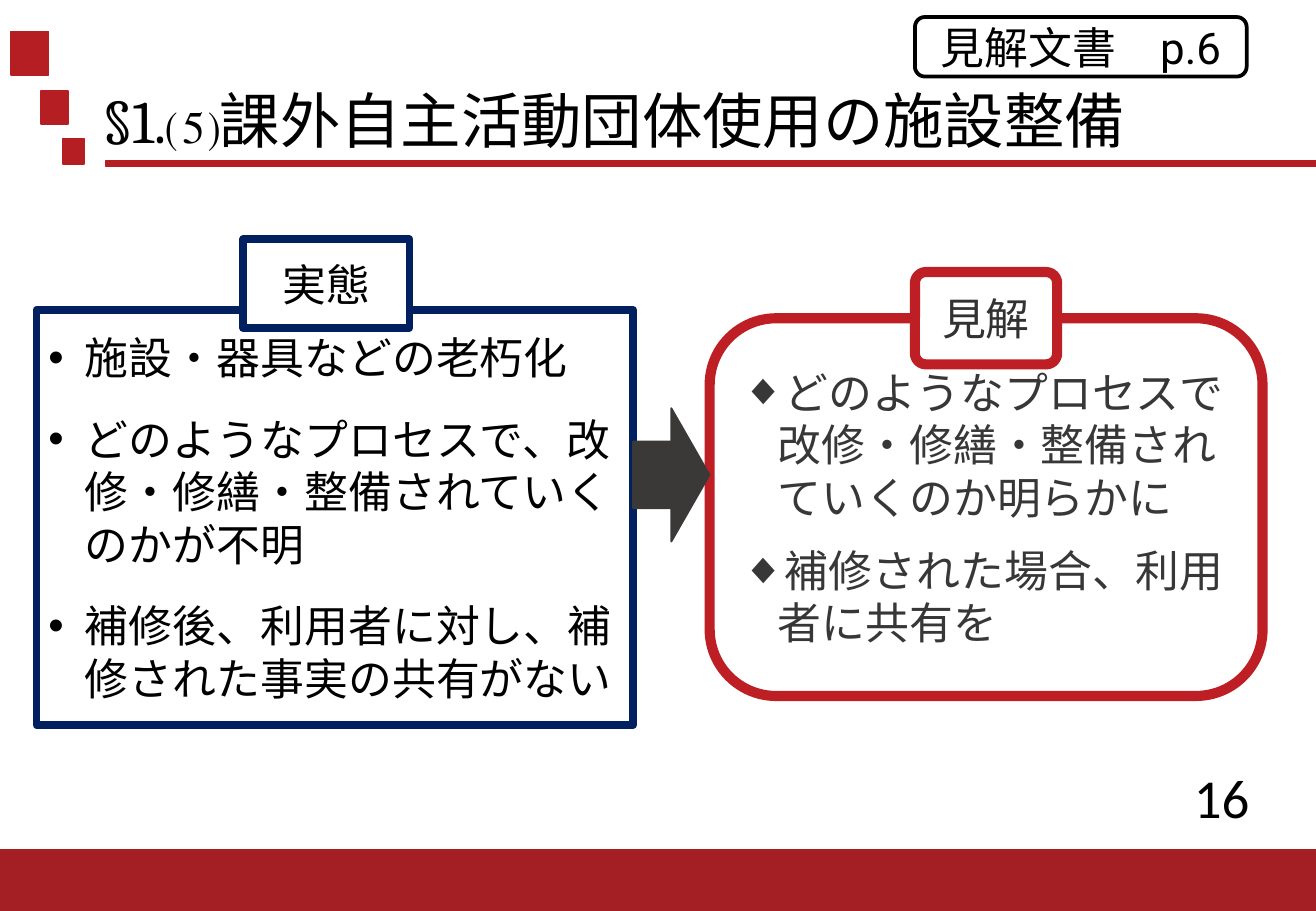
"""Build the slide that compares the facts and the opinion on facility upkeep."""
from dataclasses import dataclass
from typing import Optional

from lxml import etree
from pptx import Presentation
from pptx import util as u
from pptx.dml.color import RGBColor
from pptx.enum import shapes, text
from pptx.oxml import ns

PX = 9144
RECT = shapes.MSO_SHAPE.RECTANGLE
ROUND = shapes.MSO_SHAPE.ROUNDED_RECTANGLE
ARROW = shapes.MSO_SHAPE.RIGHT_ARROW
LEFT, MID, RIGHT = text.PP_ALIGN.LEFT, text.PP_ALIGN.CENTER, text.PP_ALIGN.RIGHT


@dataclass(frozen=True)
class Theme:
    black: str = "000000"
    white: str = "FFFFFF"
    bar: str = "A31F24"
    red: str = "B51F24"
    frame: str = "BE1F24"
    navy: str = "002060"
    gray: str = "373737"
    label: str = "323232"
    arrow: str = "3B3838"
    title: float = 35.8
    number: float = 32.5
    body: float = 26
    sans: str = "Calibri"
    serif: str = "Cambria"
    tag: str = "Roboto"


THEME = Theme()


@dataclass(frozen=True)
class Words:
    lines: tuple[str, ...]
    color: str = THEME.black
    size: float = THEME.body
    font: str = THEME.sans
    align: text.PP_ALIGN = MID
    bullet: str = ""
    gap: float = 0
    pitch: float = 1
    inset: tuple[int, int] = (10, 5)


@dataclass(frozen=True)
class Box:
    at: tuple[int, int, int, int]
    kind: Optional[shapes.MSO_SHAPE] = RECT
    fill: str = ""
    line: str = ""
    width: float = 1
    curve: Optional[float] = None
    words: Optional[Words] = None


def square(*at: int) -> Box:
    """Give a red mark of the page frame."""
    return Box(at, fill=THEME.red, line=THEME.red)


BOXES = (
    Box((0, 699, 1083, 51), fill=THEME.bar),
    square(87, 132, 996, 5),
    square(9, 26, 31, 36),
    square(34, 75, 22, 27),
    square(52, 114, 17, 21),
    Box((74, 43, 975, 118), None, words=Words(
        ("§1.⑸課外自主活動団体使用の施設整備",), size=THEME.title,
        font=THEME.serif, align=LEFT, pitch=0.9)),
    Box((794, 636, 244, 40), None, words=Words(
        ("16",), size=THEME.number, align=RIGHT)),
    Box((30, 255, 491, 342), fill=THEME.white, line=THEME.navy, width=4.5,
        words=Words(("施設・器具などの老朽化",
                     "どのようなプロセスで、改修・修繕・整備されていくのかが不明",
                     "補修後、利用者に対し、補修された事実の共有がない"),
                    align=LEFT, bullet="•", gap=17)),
    Box((200, 197, 137, 73), fill=THEME.white, line=THEME.navy, width=4.5,
        words=Words(("実態",))),
    Box((584, 262, 455, 311), ROUND, line=THEME.frame, width=6, curve=0.176,
        words=Words(("どのようなプロセスで改修・修繕・整備されていくのか明らかに",
                     "補修された場合、利用者に共有を"),
                    THEME.gray, align=LEFT, bullet="◆", gap=12)),
    Box((753, 224, 117, 76), ROUND, THEME.white, THEME.frame, 6, 0.118,
        Words(("見解",), THEME.label)),
    Box((521, 336, 63, 110), ARROW, THEME.arrow, THEME.arrow),
    Box((753, 14, 273, 49), ROUND, line=THEME.black, width=2.25,
        words=Words(("見解文書　p.6",), font=THEME.tag, inset=(8, 4))),
)


def mark(para, sign: str) -> None:
    """Hang a bullet sign in front of a paragraph."""
    props = para._p.get_or_add_pPr()
    props.set("marL", str(30 * PX))
    props.set("indent", str(-30 * PX))
    etree.SubElement(props, ns.qn("a:buFont")).set("typeface", "Arial")
    etree.SubElement(props, ns.qn("a:buChar")).set("char", sign)


def write(frame, words: Words) -> None:
    """Fill a text frame with styled paragraphs."""
    frame.word_wrap = True
    frame.vertical_anchor = text.MSO_ANCHOR.MIDDLE
    frame.margin_left = frame.margin_right = words.inset[0] * PX
    frame.margin_top = frame.margin_bottom = words.inset[1] * PX
    for i, line in enumerate(words.lines):
        para = frame.add_paragraph() if i else frame.paragraphs[0]
        para.text = line
        para.alignment = words.align
        para.line_spacing = words.pitch
        if i:
            para.space_before = u.Pt(words.gap)
        if words.bullet:
            mark(para, words.bullet)
        para.font.name = words.font
        para.font.size = u.Pt(words.size)
        para.font.color.rgb = RGBColor.from_string(words.color)


def paint(fill, color: str) -> None:
    """Set a solid colour, or none at all."""
    if color:
        fill.solid()
        fill.fore_color.rgb = RGBColor.from_string(color)
    else:
        fill.background()


def draw(slide, box: Box) -> None:
    """Put one box on the slide."""
    place = [n * PX for n in box.at]
    if box.kind is None:
        shape = slide.shapes.add_textbox(*place)
    else:
        shape = slide.shapes.add_shape(box.kind, *place)
        shape.shadow.inherit = False
        paint(shape.fill, box.fill)
        paint(shape.line.fill, box.line)
        if box.line:
            shape.line.width = u.Pt(box.width)
        if box.curve is not None:
            shape.adjustments[0] = box.curve
    if box.words:
        write(shape.text_frame, box.words)


def main() -> None:
    """Build and save the slide."""
    deck = Presentation()
    deck.slide_width, deck.slide_height = 1083 * PX, 750 * PX
    slide = deck.slides.add_slide(deck.slide_layouts[6])
    for box in BOXES:
        draw(slide, box)
    deck.save("out.pptx")


if __name__ == "__main__":
    main()
